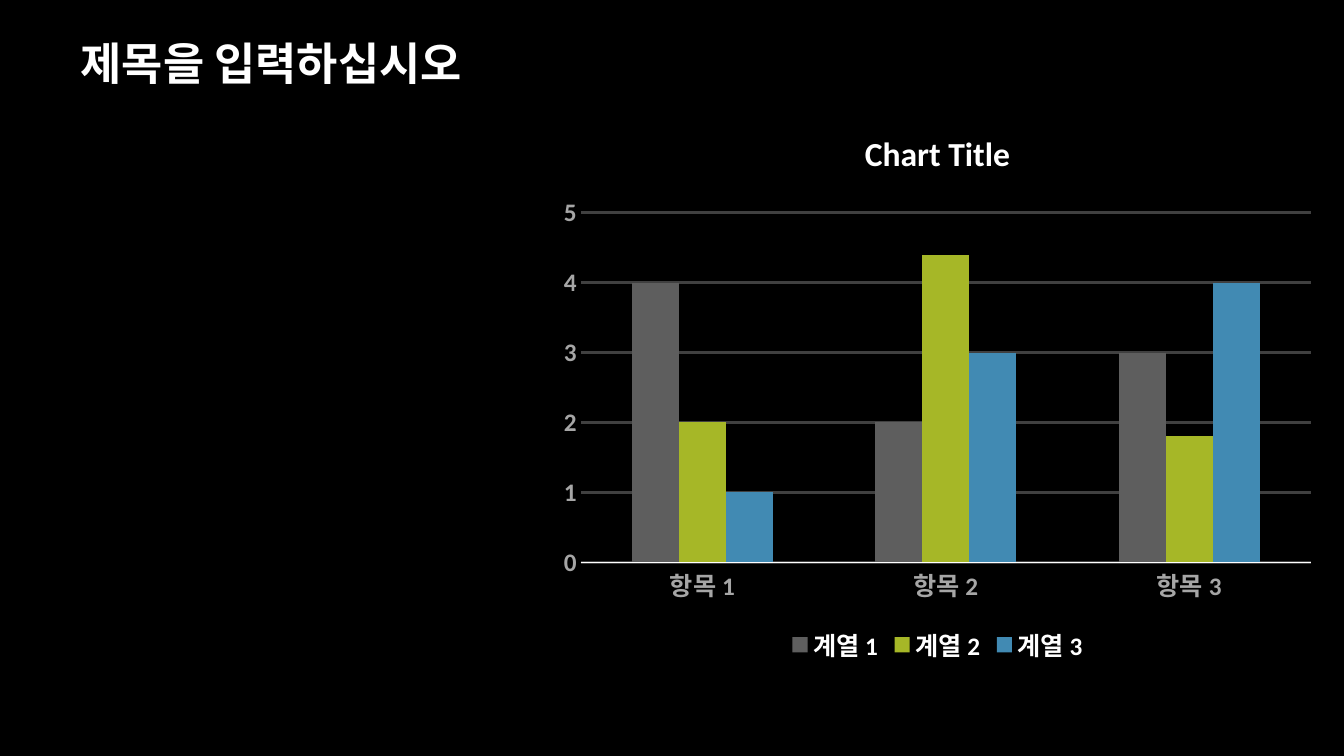
from dataclasses import dataclass

from pptx import Presentation
from pptx.chart.data import CategoryChartData
from pptx.dml.color import RGBColor
from pptx.enum.chart import XL_CHART_TYPE as ChartType
from pptx.enum.chart import XL_LEGEND_POSITION as LegendPosition
from pptx.enum.chart import XL_TICK_MARK as TickMark
from pptx.enum.text import MSO_ANCHOR as Anchor
from pptx.enum.text import PP_ALIGN as Align
from pptx.util import Pt


@dataclass(frozen=True)
class Theme:
    """Colours, font and type sizes of the slide."""
    background: str = "000000"
    text: str = "FFFFFF"
    axis_text: str = "A6A6A6"
    grid: str = "404040"
    series: tuple = ("5E5E5E", "A6B727", "418AB3")
    font: str = "Calibri"
    heading_size: int = 32
    chart_title_size: int = 24
    label_size: int = 18


THEME = Theme()
CATEGORIES = ("항목 1", "항목 2", "항목 3")
SERIES = {
    "계열 1": (4, 2, 3),
    "계열 2": (2, 4.4, 1.8),
    "계열 3": (1, 3, 4),
}


def style_font(font, size, color):
    """Apply the bold theme font in a given size and colour."""
    font.name = THEME.font
    font.size = Pt(size)
    font.bold = True
    font.color.rgb = RGBColor.from_string(color)


def place_heading(slide, left, top, width, height):
    """Fit the title placeholder into the box and fill it."""
    heading = slide.shapes.title
    heading.left, heading.top = Pt(left), Pt(top)
    heading.width, heading.height = Pt(width), Pt(height)
    frame = heading.text_frame
    frame.text = "제목을 입력하십시오"
    frame.vertical_anchor = Anchor.MIDDLE
    line = frame.paragraphs[0]
    line.alignment = Align.LEFT
    line.line_spacing = 0.9
    style_font(line.font, THEME.heading_size, THEME.text)


def style_axes(chart):
    """Format the category baseline, value scale and gridlines."""
    for axis in (chart.category_axis, chart.value_axis):
        axis.major_tick_mark = axis.minor_tick_mark = TickMark.NONE
        style_font(axis.tick_labels.font, THEME.label_size, THEME.axis_text)
    baseline = chart.category_axis.format.line
    baseline.color.rgb = RGBColor.from_string(THEME.text)
    baseline.width = Pt(0.75)
    scale = chart.value_axis
    scale.minimum_scale, scale.maximum_scale, scale.major_unit = 0, 5, 1
    scale.format.line.fill.background()
    grid = scale.major_gridlines.format.line
    grid.color.rgb = RGBColor.from_string(THEME.grid)
    grid.width = Pt(2.25)


def place_chart(slide, left, top, width, height):
    """Draw the clustered columns with title and legend in the box."""
    data = CategoryChartData()
    data.categories = CATEGORIES
    for name, values in SERIES.items():
        data.add_series(name, values)
    chart = slide.shapes.add_chart(
        ChartType.COLUMN_CLUSTERED, Pt(left), Pt(top), Pt(width), Pt(height), data
    ).chart
    style_font(chart.font, THEME.label_size, THEME.axis_text)

    caption = chart.chart_title.text_frame
    caption.text = "Chart Title"
    style_font(caption.paragraphs[0].font, THEME.chart_title_size, THEME.text)
    chart.chart_title.include_in_layout = False

    chart.has_legend = True
    chart.legend.position = LegendPosition.BOTTOM
    chart.legend.include_in_layout = False
    style_font(chart.legend.font, THEME.label_size, THEME.text)

    style_axes(chart)
    columns = chart.plots[0]
    columns.gap_width, columns.overlap = 219, 0
    columns.vary_by_categories = False
    for series, color in zip(columns.series, THEME.series):
        series.format.fill.solid()
        series.format.fill.fore_color.rgb = RGBColor.from_string(color)
        series.invert_if_negative = False


def main():
    """Build the slide and save it."""
    deck = Presentation()
    deck.slide_width, deck.slide_height = Pt(960), Pt(540)
    slide = deck.slides.add_slide(deck.slide_layouts.get_by_name("Title Only"))
    slide.background.fill.solid()
    slide.background.fill.fore_color.rgb = RGBColor.from_string(THEME.background)
    place_chart(slide, 391.68, 77.76, 555.84, 399.6)
    place_heading(slide, 50.4, 14.4, 856.8, 64.8)
    deck.save("out.pptx")


if __name__ == "__main__":
    main()
